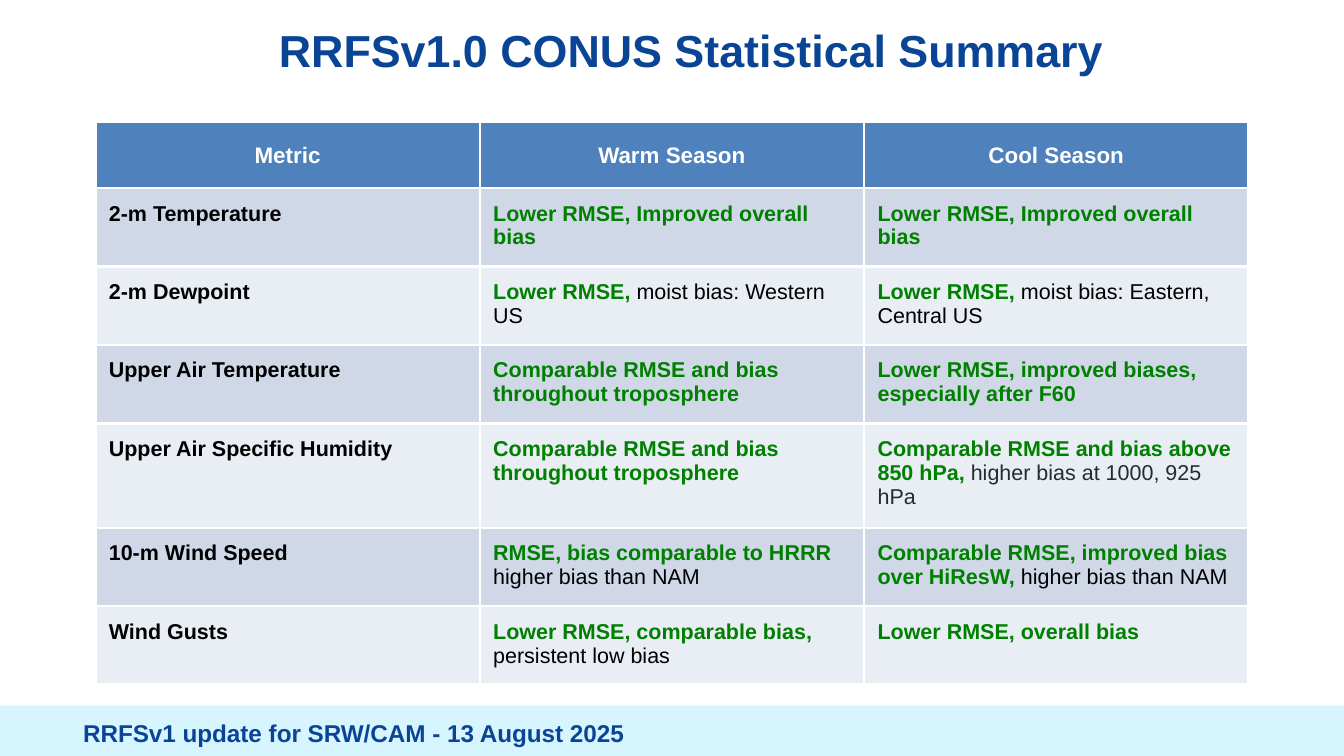
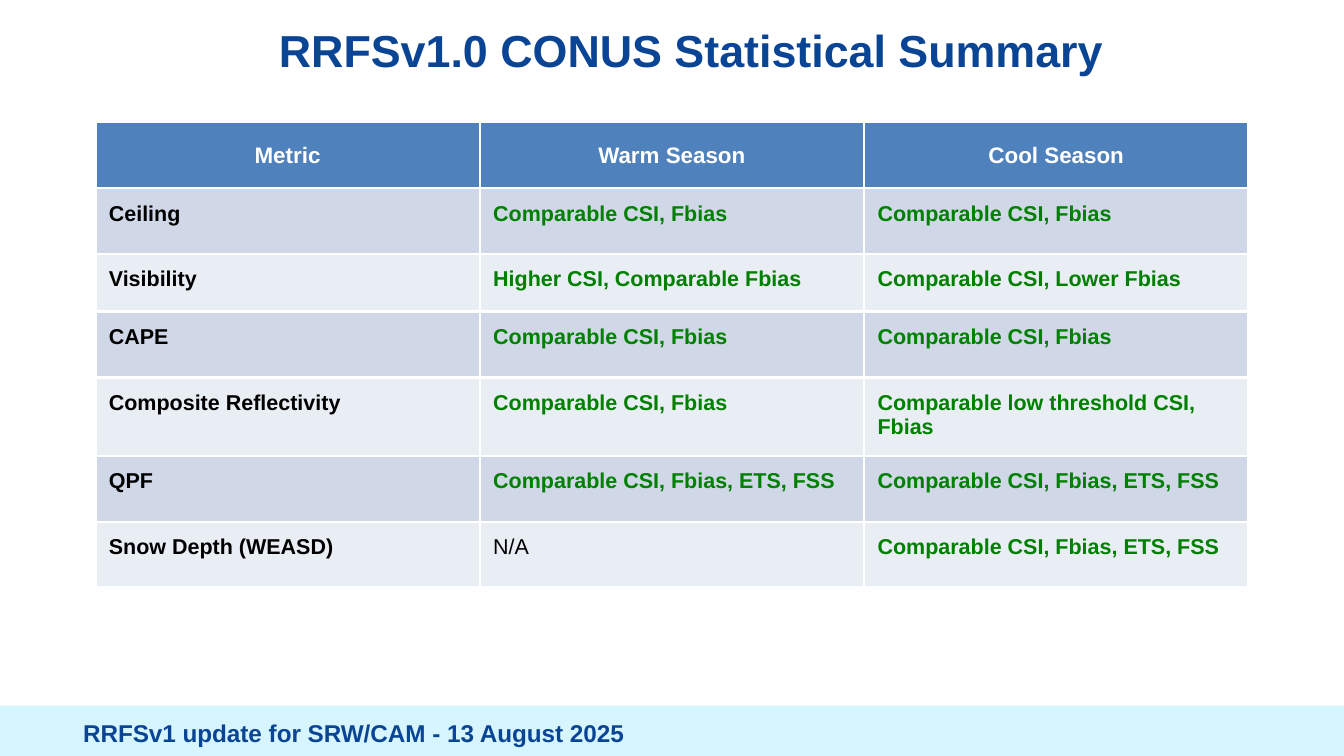
from typing import NamedTuple

from lxml.etree import SubElement
from pptx import Presentation
from pptx.dml.color import RGBColor
from pptx.enum.shapes import MSO_SHAPE
from pptx.enum.text import MSO_ANCHOR, PP_ALIGN
from pptx.oxml.ns import qn
from pptx.util import Emu, Pt

EMU_PER_PX = 4572  # 200 px to the inch
FONT = "Arial"
COLORS = {
    "white": "FFFFFF",
    "black": "000000",
    "slate": "252C31",
    "green": "008000",
    "navy": "0A4595",
    "footer": "D6F5FF",
    "header": "4F81BD",
    "band_dark": "D0D8E8",
    "band_light": "E9EDF4",
}


class Box(NamedTuple):
    left: int
    top: int
    width: int
    height: int


class TextRun(NamedTuple):
    text: str
    color: str
    bold: bool = True
    size: float = 11.5


class MetricRow(NamedTuple):
    metric: str
    warm: list[TextRun]
    cool: list[TextRun]


# Shared layout
SLIDE_WIDTH, SLIDE_HEIGHT = 2000, 1125
TITLE_BOX = Box(156, 8, 1744, 130)
FOOTER_BAND = Box(0, 1050, 2000, 75)
FOOTER_BOX = Box(104, 1048, 1494, 84)
TABLE_LEFT, TABLE_TOP = 142, 182
COLUMN_WIDTH = 572
ROW_HEIGHTS = [98, 98, 86, 98, 98, 98, 98]
INSET = 20
BORDER_POINTS = 1.5

TITLE = "RRFSv1.0 CONUS Statistical Summary"
FOOTER = "RRFSv1 update for SRW/CAM - 13 August 2025"
HEADINGS = ["Metric", "Warm Season", "Cool Season"]


def good(text: str) -> TextRun:
    return TextRun(text, "green")


def plain(text: str, color: str = "black") -> TextRun:
    return TextRun(text, color, bold=False)


# Table content, one list per slide
LOWER_IMPROVED = [good("Lower RMSE, Improved overall bias")]
TROPOSPHERE = [good("Comparable RMSE and bias throughout troposphere")]
COMPARABLE = [good("Comparable CSI, Fbias")]
ALL_SCORES = [good("Comparable CSI, Fbias, ETS, FSS")]

CONTINUOUS_METRICS = [
    MetricRow("2-m Temperature", LOWER_IMPROVED, LOWER_IMPROVED),
    MetricRow(
        "2-m Dewpoint",
        [good("Lower RMSE, "), plain("moist bias: Western US")],
        [good("Lower RMSE, "), plain("moist bias: Eastern, Central US")],
    ),
    MetricRow(
        "Upper Air Temperature",
        TROPOSPHERE,
        [good("Lower RMSE, improved biases, especially after F60")],
    ),
    MetricRow(
        "Upper Air Specific Humidity",
        TROPOSPHERE,
        [
            good("Comparable RMSE and bias above 850 hPa, "),
            plain("higher bias at 1000, 925 hPa", "slate"),
        ],
    ),
    MetricRow(
        "10-m Wind Speed",
        [good("RMSE, bias comparable to HRRR "), plain("higher bias than NAM")],
        [
            good("Comparable RMSE, improved bias over HiResW, "),
            plain("higher bias than NAM"),
        ],
    ),
    MetricRow(
        "Wind Gusts",
        [good("Lower RMSE, comparable bias, "), plain("persistent low bias")],
        [good("Lower RMSE, overall bias")],
    ),
]
CATEGORICAL_METRICS = [
    MetricRow("Ceiling", COMPARABLE, COMPARABLE),
    MetricRow(
        "Visibility",
        [good("Higher CSI, Comparable Fbias")],
        [good("Comparable CSI, Lower Fbias")],
    ),
    MetricRow("CAPE", COMPARABLE, COMPARABLE),
    MetricRow(
        "Composite Reflectivity",
        COMPARABLE,
        [good("Comparable low threshold CSI, Fbias")],
    ),
    MetricRow("QPF", ALL_SCORES, ALL_SCORES),
    MetricRow("Snow Depth (WEASD)", [plain("N/A")], ALL_SCORES),
]


def px(length: int) -> Emu:
    return Emu(length * EMU_PER_PX)


def place(box: Box) -> list[Emu]:
    return [px(length) for length in box]


def rgb(name: str) -> RGBColor:
    return RGBColor.from_string(COLORS[name])


def write_runs(text_frame, text_runs: list[TextRun], alignment: PP_ALIGN) -> None:
    paragraph = text_frame.paragraphs[0]
    paragraph.alignment = alignment
    for text_run in text_runs:
        run = paragraph.add_run()
        run.text = text_run.text
        run.font.name = FONT
        run.font.size = Pt(text_run.size)
        run.font.bold = text_run.bold
        run.font.color.rgb = rgb(text_run.color)


def set_margins(holder) -> None:
    holder.margin_left = holder.margin_right = px(INSET)
    holder.margin_top = holder.margin_bottom = px(INSET)


def add_text(slide, box: Box, text_run: TextRun, alignment: PP_ALIGN) -> None:
    text_frame = slide.shapes.add_textbox(*place(box)).text_frame
    text_frame.word_wrap = True
    text_frame.vertical_anchor = MSO_ANCHOR.MIDDLE
    set_margins(text_frame)
    write_runs(text_frame, [text_run], alignment)


def add_footer(slide) -> None:
    band = slide.shapes.add_shape(MSO_SHAPE.RECTANGLE, *place(FOOTER_BAND))
    band.shadow.inherit = False
    band.fill.solid()
    band.fill.fore_color.rgb = rgb("footer")
    band.line.fill.background()
    add_text(slide, FOOTER_BOX, TextRun(FOOTER, "navy", size=13), PP_ALIGN.LEFT)


def add_borders(cell) -> None:
    properties = cell._tc.get_or_add_tcPr()
    for side in ("a:lnL", "a:lnR", "a:lnT", "a:lnB"):
        line = SubElement(properties, qn(side), w=str(Pt(BORDER_POINTS)))
        fill = SubElement(line, qn("a:solidFill"))
        SubElement(fill, qn("a:srgbClr"), val=COLORS["white"])


def fill_cell(cell, text_runs: list[TextRun], fill: str, is_header: bool) -> None:
    add_borders(cell)
    cell.fill.solid()
    cell.fill.fore_color.rgb = rgb(fill)
    set_margins(cell)
    cell.vertical_anchor = MSO_ANCHOR.MIDDLE if is_header else MSO_ANCHOR.TOP
    alignment = PP_ALIGN.CENTER if is_header else PP_ALIGN.LEFT
    write_runs(cell.text_frame, text_runs, alignment)


def add_metric_table(slide, metric_rows: list[MetricRow]) -> None:
    box = Box(TABLE_LEFT, TABLE_TOP, COLUMN_WIDTH * len(HEADINGS), sum(ROW_HEIGHTS))
    frame = slide.shapes.add_table(len(ROW_HEIGHTS), len(HEADINGS), *place(box))
    table = frame.table
    table.first_row = table.horz_banding = False
    for column in table.columns:
        column.width = px(COLUMN_WIDTH)
    for row, height in zip(table.rows, ROW_HEIGHTS):
        row.height = px(height)

    # Header row
    for index, heading in enumerate(HEADINGS):
        heading_run = TextRun(heading, "white", size=12)
        fill_cell(table.cell(0, index), [heading_run], "header", is_header=True)

    # Banded body rows
    for row_index, metric_row in enumerate(metric_rows, start=1):
        fill = "band_dark" if row_index % 2 else "band_light"
        metric = [TextRun(metric_row.metric, "black")]
        for index, text_runs in enumerate([metric, metric_row.warm, metric_row.cool]):
            fill_cell(table.cell(row_index, index), text_runs, fill, is_header=False)


def add_summary_slide(presentation, metric_rows: list[MetricRow]) -> None:
    slide = presentation.slides.add_slide(presentation.slide_layouts[6])
    add_footer(slide)
    add_metric_table(slide, metric_rows)
    add_text(slide, TITLE_BOX, TextRun(TITLE, "navy", size=24), PP_ALIGN.CENTER)


def main() -> None:
    presentation = Presentation()
    presentation.slide_width = px(SLIDE_WIDTH)
    presentation.slide_height = px(SLIDE_HEIGHT)
    for metric_rows in (CONTINUOUS_METRICS, CATEGORICAL_METRICS):
        add_summary_slide(presentation, metric_rows)
    presentation.save("out.pptx")


if __name__ == "__main__":
    main()
